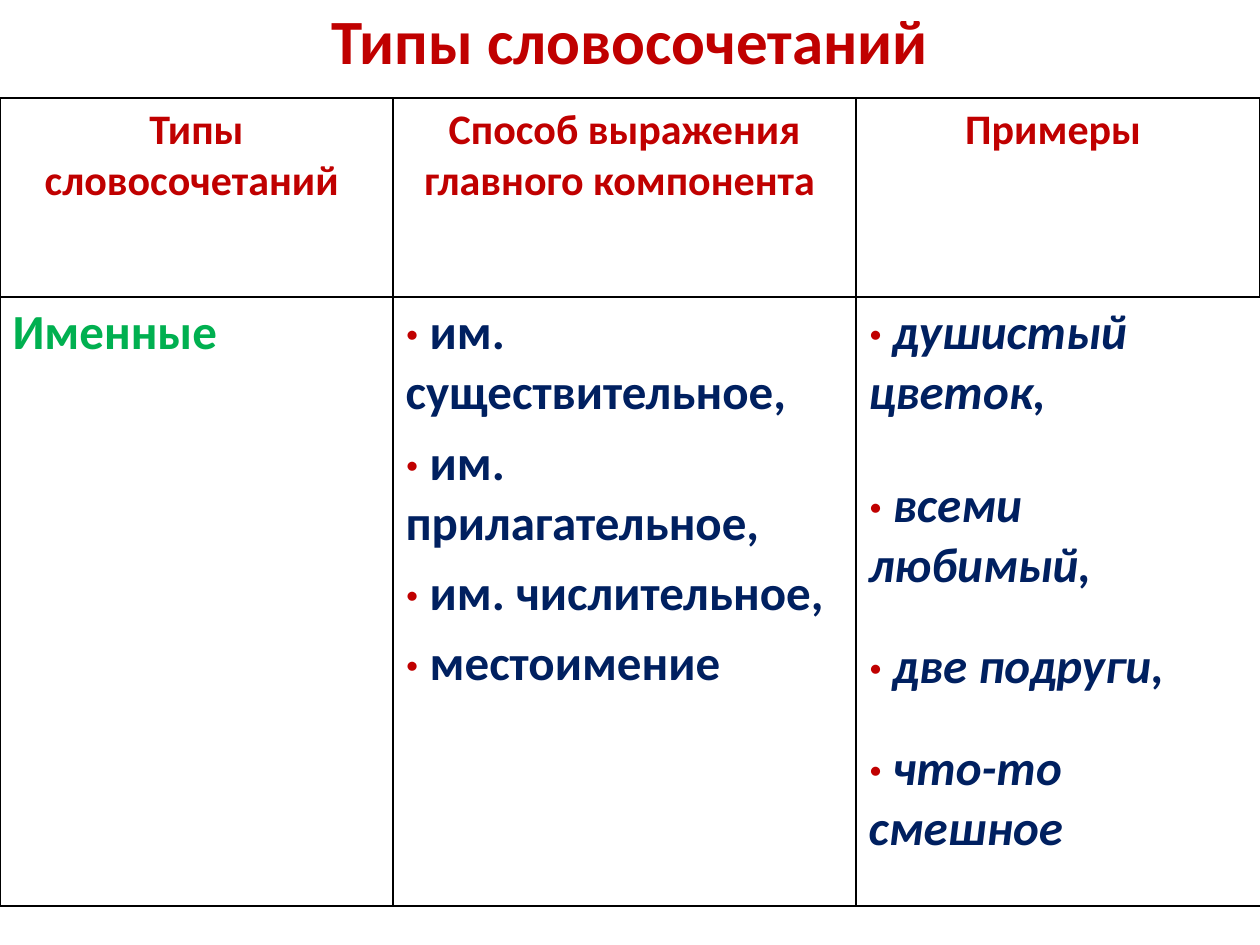
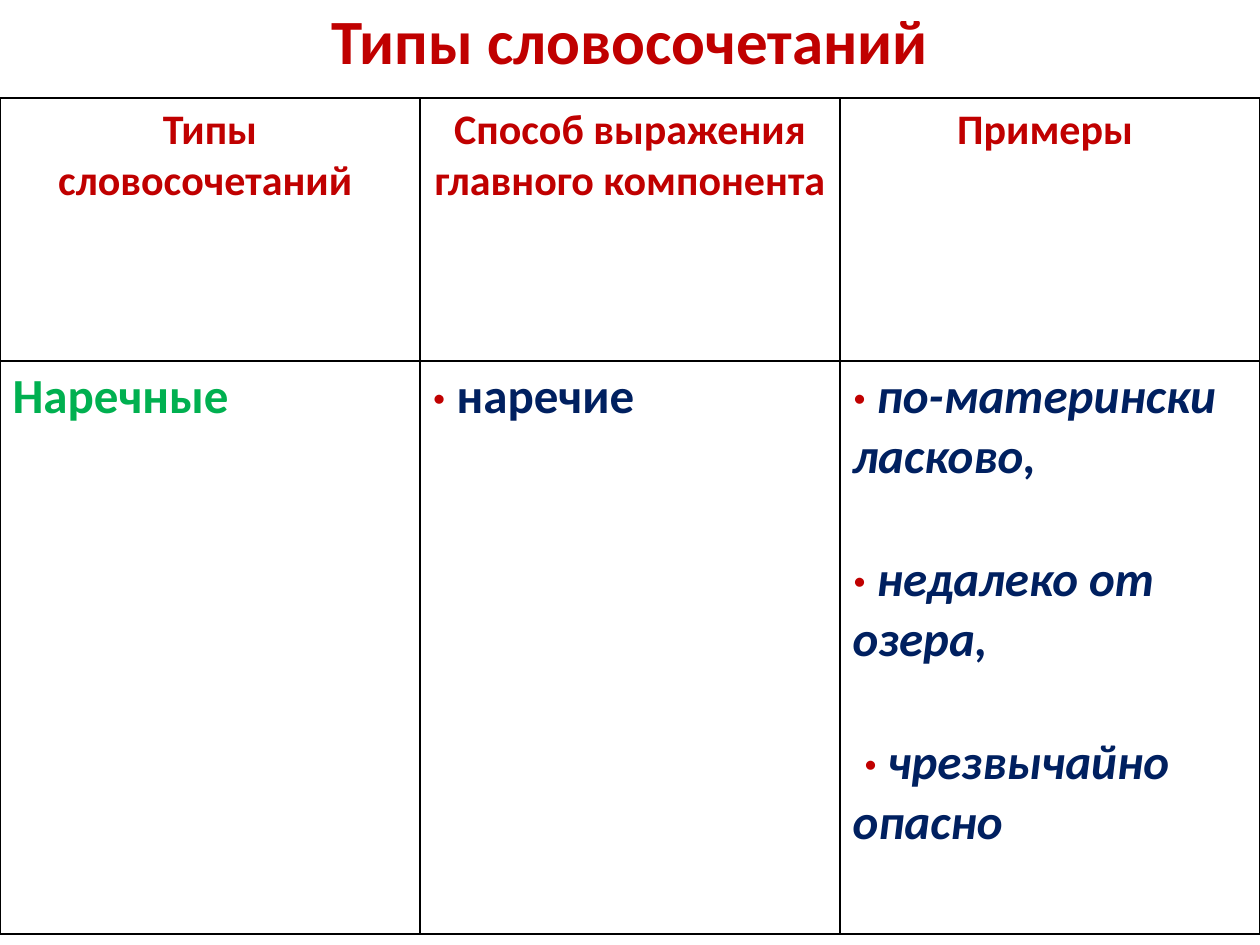
from dataclasses import dataclass
from lxml.etree import SubElement as Sub
from pptx import Presentation as Deck
from pptx.dml.color import RGBColor as Color
from pptx.enum.text import MSO_ANCHOR as Anchor, PP_ALIGN as Align
from pptx.oxml.ns import qn
from pptx.util import Pt


@dataclass(frozen=True)
class Theme:
    font: str = "Calibri"
    red: str = "C00000"
    green: str = "00B050"
    navy: str = "002060"
    black: str = "000000"
    title: int = 36
    head: int = 24
    body: int = 28


theme = Theme()
SCALE = 914400 / 126


def px(n):
    return round(n * SCALE)


def write(par, text, **look):
    run = par.add_run()
    run.text = text
    style = {"name": theme.font, "bold": True, **look}
    run.font.color.rgb = Color.from_string(style.pop("color"))
    for key, value in style.items():
        setattr(run.font, key, value)


WIDTH, HEIGHT, TOP = 1260, 945, 98
TITLE = "Типы словосочетаний"
HEADS = [TITLE, "Способ выражения главного компонента", "Примеры"]
SLIDES = [
    {
        "cols": [393, 463, 404],
        "rows": [199, 609],
        "type": "Именные",
        "forms": ["им. существительное,", "им. прилагательное,",
                  "им. числительное,", "местоимение"],
        "cases": [("душистый цветок,", 0, 0), ("всеми любимый,", 30, 0),
                  ("две подруги,", 24, 0), ("что-то смешное", 24, 0)],
        "open": True,
    },
    {
        "cols": [WIDTH // 3] * 3,
        "rows": [263, 573],
        "type": "Наречные",
        "forms": ["наречие"],
        "cases": [("по-матерински ласково,", 0, 0),
                  ("недалеко от озера,", 36, 0),
                  ("чрезвычайно опасно", 36, 11)],
        "open": False,
    },
]

deck = Deck()
deck.slide_width, deck.slide_height = px(WIDTH), px(HEIGHT)

for data in SLIDES:
    slide = deck.slides.add_slide(deck.slide_layouts[6])
    frame = slide.shapes.add_textbox(0, 0, px(WIDTH), px(78)).text_frame
    frame.word_wrap = True
    frame.vertical_anchor = Anchor.MIDDLE
    par = frame.paragraphs[0]
    par.alignment = Align.CENTER
    write(par, TITLE, size=Pt(theme.title), color=theme.red)

    table = slide.shapes.add_table(
        2, 3, 0, px(TOP), px(WIDTH), px(sum(data["rows"]))).table
    table.first_row = table.horz_banding = False
    for col, size in zip(table.columns, data["cols"]):
        col.width = px(size)
    for row, size in zip(table.rows, data["rows"]):
        row.height = px(size)

    for i, head in enumerate(HEADS):
        par = table.cell(0, i).text_frame.paragraphs[0]
        par.alignment = Align.CENTER
        write(par, head + " ", size=Pt(theme.head), color=theme.red)

    par = table.cell(1, 0).text_frame.paragraphs[0]
    write(par, data["type"], size=Pt(theme.body), color=theme.green)

    forms = [(text, 6 if i else 0, 0) for i, text in enumerate(data["forms"])]
    for i, items in enumerate([forms, data["cases"]], 1):
        frame = table.cell(1, i).text_frame
        look = {"size": Pt(theme.body), "italic": i == 2}
        for n, (text, gap, shift) in enumerate(items):
            par = frame.add_paragraph() if n else frame.paragraphs[0]
            if gap:
                par.space_before = Pt(gap)
            if shift:
                par._p.get_or_add_pPr().set("indent", str(px(shift)))
            write(par, "·", color=theme.red, **look)
            write(par, " " + text, color=theme.navy, **look)

    for r in range(2):
        for c in range(3):
            cell = table.cell(r, c)
            props = cell._tc.get_or_add_tcPr()
            for side in "LRTB":
                line = Sub(props, qn("a:ln" + side), w=str(Pt(1)))
                if data["open"] and (r, c, side) == (1, 2, "R"):
                    Sub(line, qn("a:noFill"))
                else:
                    fill = Sub(line, qn("a:solidFill"))
                    Sub(fill, qn("a:srgbClr"), val=theme.black)
            cell.fill.background()

deck.save("out.pptx")
